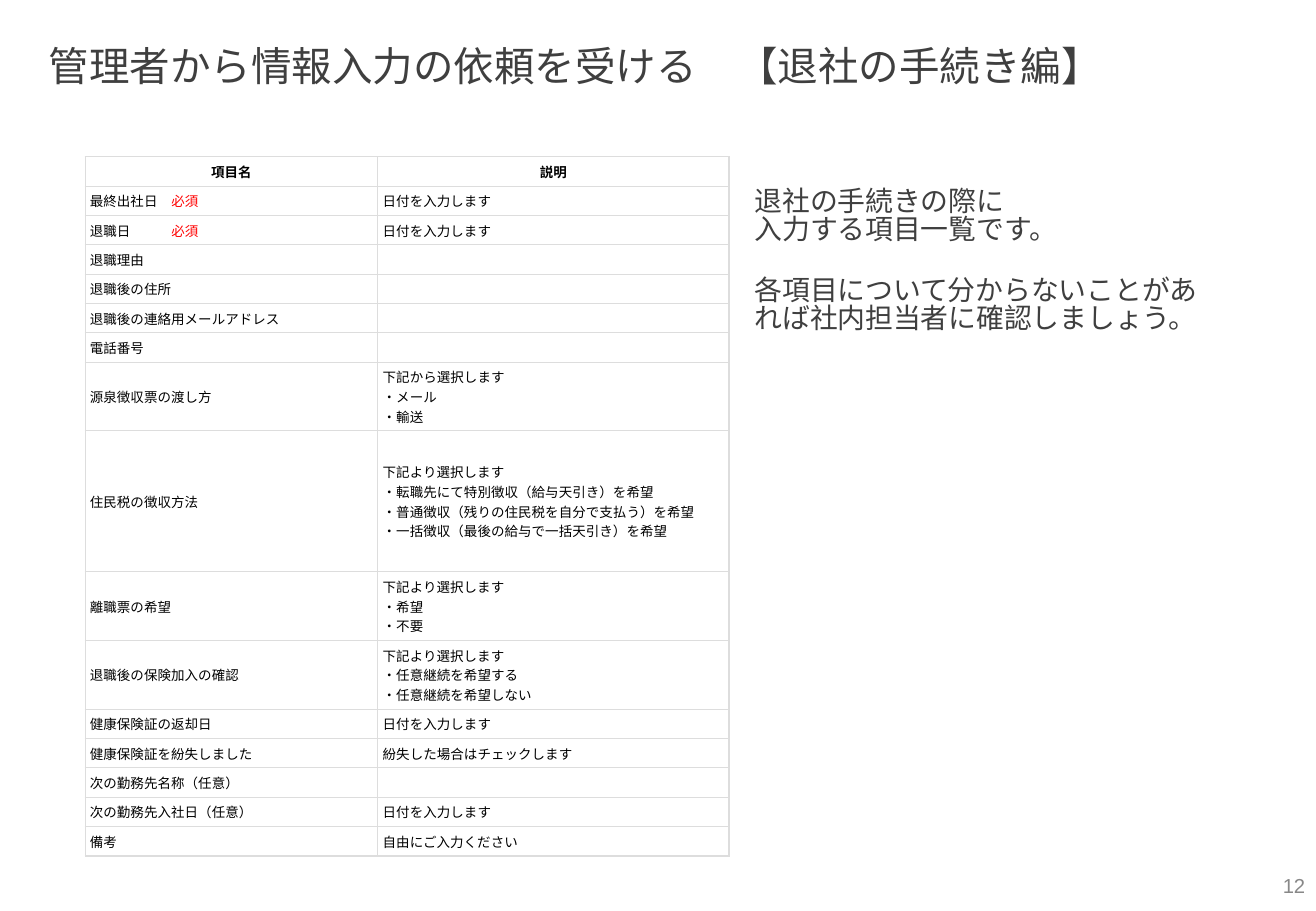
"""Build the slide listing the fields to fill in when leaving the company."""
from lxml.etree import SubElement
from pptx import Presentation
from pptx.dml.color import RGBColor
from pptx.enum.text import MSO_ANCHOR as Anchor, MSO_AUTO_SIZE as Fit, PP_ALIGN as Align
from pptx.oxml.ns import qn
from pptx.util import Inches, Pt

BLACK = RGBColor(0, 0, 0)
RED = RGBColor(255, 0, 0)
WHITE = RGBColor(255, 255, 255)
DARK = RGBColor(0x3F, 0x3F, 0x3F)
GREY = RGBColor(0x88, 0x88, 0x88)
EDGE = RGBColor(0xDD, 0xDD, 0xDD)

DATE = "日付を入力します"
PICK = "下記より選択します\n"
ROWS = [
    ("項目名", "説明", 0.24),
    ("最終出社日　", DATE, 0.24),
    ("退職日　　　", DATE, 0.24),
    ("退職理由", "", 0.24),
    ("退職後の住所", "", 0.24),
    ("退職後の連絡用メールアドレス", "", 0.24),
    ("電話番号", "", 0.24),
    ("源泉徴収票の渡し方", "下記から選択します\n・メール\n・輸送", 0.54),
    ("住民税の徴収方法", PICK + "・転職先にて特別徴収（給与天引き）を希望\n"
     "・普通徴収（残りの住民税を自分で支払う）を希望\n"
     "・一括徴収（最後の給与で一括天引き）を希望", 1.16),
    ("離職票の希望", PICK + "・希望\n・不要", 0.54),
    ("退職後の保険加入の確認", PICK + "・任意継続を希望する\n・任意継続を希望しない", 0.54),
    ("健康保険証の返却日", DATE, 0.24),
    ("健康保険証を紛失しました", "紛失した場合はチェックします", 0.24),
    ("次の勤務先名称（任意）", "", 0.24),
    ("次の勤務先入社日（任意）", DATE, 0.24),
    ("備考", "自由にご入力ください", 0.24),
]
MUST = (1, 2)


def style(para, size, color, bold=False):
    for run in para.runs:
        run.font.name = "Arial"
        run.font.size = Pt(size)
        run.font.bold = bold
        run.font.color.rgb = color


def place(shape, left, top, width, height):
    shape.left, shape.top = Inches(left), Inches(top)
    shape.width, shape.height = Inches(width), Inches(height)


prs = Presentation()
prs.slide_width, prs.slide_height = Inches(10.83), Inches(7.5)
slide = prs.slides.add_slide(prs.slide_layouts[1])

title = slide.shapes.title
place(title, 0.3, 0.33, 9.31, 0.5)
frame = title.text_frame
frame.text = "管理者から情報入力の依頼を受ける　【退社の手続き編】"
frame.vertical_anchor = Anchor.TOP
frame.auto_size = Fit.NONE
para = frame.paragraphs[0]
para.alignment = Align.LEFT
para.line_spacing = 0.9
style(para, 24, DARK)

total = sum(row[2] for row in ROWS)
grid = slide.shapes.add_table(len(ROWS), 2, Inches(0.7), Inches(1.29),
                              Inches(5.3), Inches(total)).table
grid.first_row = grid.horz_banding = False
grid.columns[0].width, grid.columns[1].width = Inches(2.41), Inches(2.89)

for r, (name, note, height) in enumerate(ROWS):
    grid.rows[r].height = Inches(height)
    for c, text in enumerate((name, note)):
        cell = grid.cell(r, c)
        cell.vertical_anchor = Anchor.MIDDLE
        cell.margin_left = cell.margin_right = Inches(0.04)
        cell.margin_top = cell.margin_bottom = Inches(0.04)
        for side in ("a:lnL", "a:lnR", "a:lnT", "a:lnB"):
            line = SubElement(cell._tc.get_or_add_tcPr(), qn(side), w=str(Pt(0.75)))
            fill = SubElement(line, qn("a:solidFill"))
            SubElement(fill, qn("a:srgbClr"), val=str(EDGE))
        cell.fill.solid()
        cell.fill.fore_color.rgb = WHITE
        para = cell.text_frame.paragraphs[0]
        if not text:
            SubElement(para._p, qn("a:endParaRPr"), sz="800")
            continue
        para.text = text
        para.alignment = Align.LEFT if r else Align.CENTER
        if c == 0 and r in MUST:
            para.add_run().text = "必須"
        style(para, 8, BLACK, bold=r == 0)
        if c == 0 and r in MUST:
            para.runs[-1].font.color.rgb = RED

body = slide.placeholders[1]
place(body, 6.11, 1.51, 3.89, 1.77)
frame = body.text_frame
frame.text = "退社の手続きの際に\v入力する項目一覧です。\n各項目について分からないことがあれば社内担当者に確認しましょう。"
frame.auto_size = Fit.NONE
for para, gap in zip(frame.paragraphs, (0, 20)):
    para.line_spacing = 0.83
    para.space_before = Pt(gap)
    props = para._p.get_or_add_pPr()
    props.set("marL", "0")
    props.set("indent", "0")
    SubElement(props, qn("a:buNone"))
    style(para, 16.5, DARK)

page = slide.shapes.add_textbox(Inches(8.4), Inches(7.09), Inches(2.44), Inches(0.4))
frame = page.text_frame
frame.word_wrap = True
frame.text = "12"
frame.vertical_anchor = Anchor.MIDDLE
frame.paragraphs[0].alignment = Align.RIGHT
style(frame.paragraphs[0], 12, GREY)

prs.save("out.pptx")
